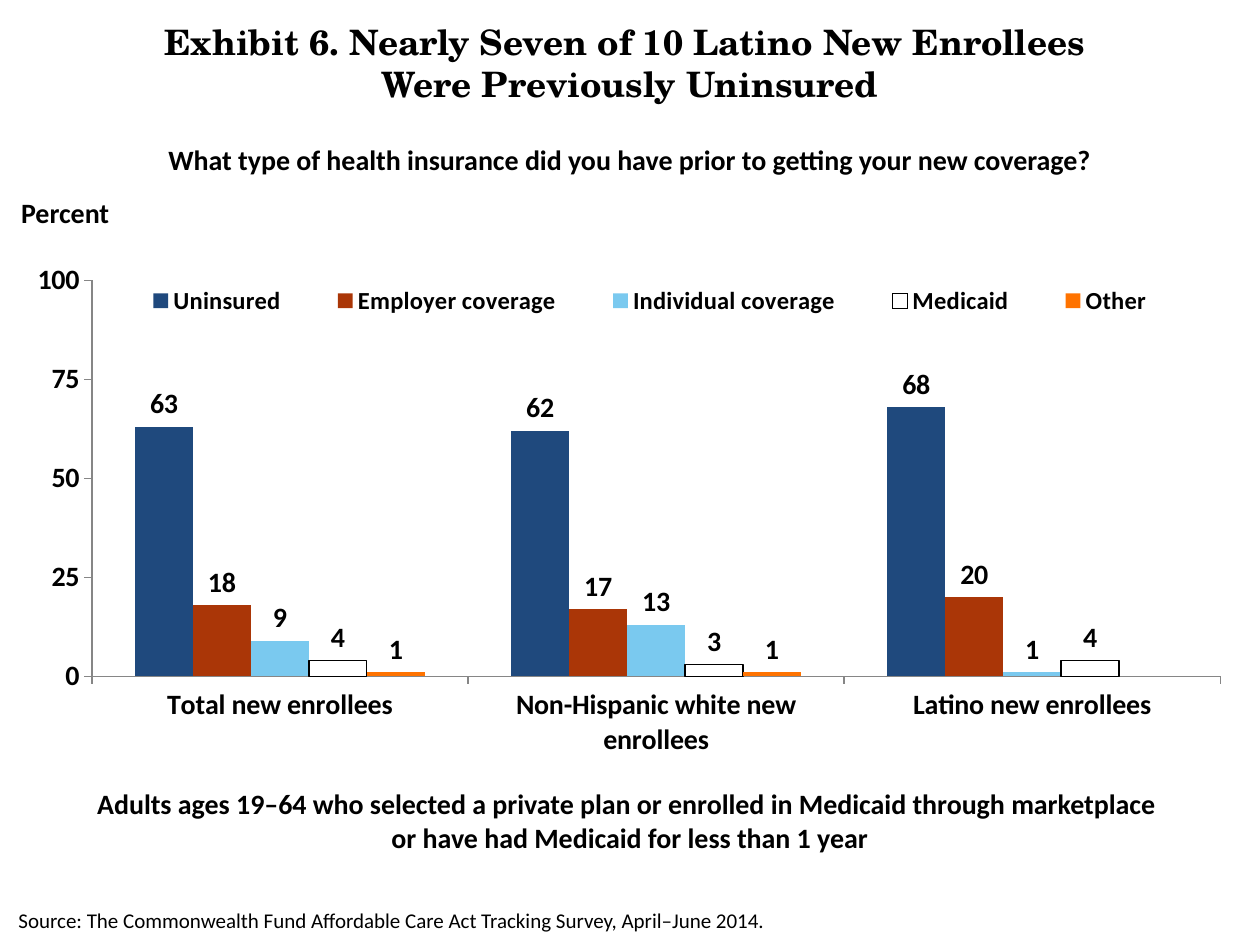
from lxml import etree
from pptx import Presentation
from pptx import util as u
from pptx.chart.data import CategoryChartData
from pptx.dml.color import RGBColor
from pptx.enum import chart as ch, text
from pptx.oxml import ns

COLORS = {
    "text": "000000",
    "axis": "868686",
    "Uninsured": "1F497D",
    "Employer coverage": "AA3607",
    "Individual coverage": "7AC9EF",
    "Medicaid": "FFFFFF",
    "Other": "FF7300",
}
GROUPS = ["Total new enrollees", "Non-Hispanic white new enrollees", "Latino new enrollees"]
PRIOR_COVERAGE = {
    "Uninsured": (63, 62, 68),
    "Employer coverage": (18, 17, 20),
    "Individual coverage": (9, 13, 1),
    "Medicaid": (4, 3, 4),
    "Other": (1, 1, None),
}


def color(name):
    return RGBColor.from_string(COLORS[name])


def place(parent, index, x, y, w, h, inner=False):
    """Fix a chart part's position, in fractions of the chart frame."""
    for old in parent.findall(ns.qn("c:layout")):
        parent.remove(old)
    layout = etree.Element(ns.qn("c:layout"))
    manual = etree.SubElement(layout, ns.qn("c:manualLayout"))
    settings = [("layoutTarget", "inner")] if inner else []
    settings += [("xMode", "edge"), ("yMode", "edge"), ("x", x), ("y", y), ("w", w), ("h", h)]
    for tag, value in settings:
        etree.SubElement(manual, ns.qn(f"c:{tag}")).set("val", str(value))
    parent.insert(index, layout)


class Exhibit:
    body_font = "Calibri"
    title_font = "TeX Gyre Schola"

    def __init__(self, slide):
        self.slide = slide

    def style(self, font, size, bold=True, name=None):
        font.name = name or self.body_font
        font.size = u.Pt(size)
        font.bold = bold
        font.color.rgb = color("text")

    def text(self, words, left, top, width, height, size=16, bold=True, name=None,
             align=text.PP_ALIGN.CENTER, anchor=text.MSO_ANCHOR.TOP):
        box = self.slide.shapes.add_textbox(*map(u.Pt, (left, top, width, height)))
        frame = box.text_frame
        frame.word_wrap = True
        frame.vertical_anchor = anchor
        paragraph = frame.paragraphs[0]
        paragraph.text = words
        paragraph.alignment = align
        self.style(paragraph.font, size, bold, name)

    def columns(self, groups, series_values, left, top, width, height):
        data = CategoryChartData(number_format="General")
        data.categories = groups
        for name, values in series_values.items():
            data.add_series(name, values)
        chart = self.slide.shapes.add_chart(
            ch.XL_CHART_TYPE.COLUMN_CLUSTERED, *map(u.Pt, (left, top, width, height)), data).chart
        self.style(chart.font, 16)
        chart.has_title = False

        plot = chart.plots[0]
        plot.gap_width = 149
        plot.overlap = 0
        plot.vary_by_categories = False
        for series in plot.series:
            series.format.fill.solid()
            series.format.fill.fore_color.rgb = color(series.name)
            series.invert_if_negative = False
            labels = series.data_labels
            labels.show_value = True
            labels.position = ch.XL_LABEL_POSITION.OUTSIDE_END
            self.style(labels.font, 16)
            if series.name == "Medicaid":
                series.format.line.color.rgb = color("text")
                series.format.line.width = u.Pt(0.75)

        for axis in (chart.category_axis, chart.value_axis):
            axis.has_major_gridlines = False
            axis.major_tick_mark = ch.XL_TICK_MARK.OUTSIDE
            axis.minor_tick_mark = ch.XL_TICK_MARK.NONE
            axis.format.line.color.rgb = color("axis")
            axis.format.line.width = u.Pt(0.75)
            self.style(axis.tick_labels.font, 16)
        chart.value_axis.minimum_scale = 0
        chart.value_axis.maximum_scale = 100
        chart.value_axis.major_unit = 25

        chart.has_legend = True
        legend = chart.legend
        legend.position = ch.XL_LEGEND_POSITION.TOP
        legend.include_in_layout = False
        self.style(legend.font, 14)
        plot_area = chart.element.find(".//" + ns.qn("c:plotArea"))
        place(plot_area, 0, 0.09, 0.06, 0.9, 0.77, inner=True)
        place(chart.element.find(".//" + ns.qn("c:legend")), 1, 0.1, 0.06, 0.87, 0.08)


def main():
    deck = Presentation()
    deck.slide_width, deck.slide_height = u.Pt(720), u.Pt(540)
    exhibit = Exhibit(deck.slides.add_slide(deck.slide_layouts[6]))
    left = text.PP_ALIGN.LEFT

    exhibit.text("Exhibit 6. Nearly Seven of 10 Latino New Enrollees \vWere Previously Uninsured",
                 0, 7, 720, 58, size=20, name=exhibit.title_font,
                 anchor=text.MSO_ANCHOR.MIDDLE)
    exhibit.text("Adults ages 19–64 who selected a private plan or enrolled in Medicaid "
                 "through marketplace \vor have had Medicaid for less than 1 year",
                 0, 446, 720, 46)
    exhibit.columns(GROUPS, PRIOR_COVERAGE, -12, 142.5, 716.5, 294)
    exhibit.text("Percent", 5, 108, 138, 27, align=left)
    exhibit.text("Source: The Commonwealth Fund Affordable Care Act Tracking Survey, April–June 2014.",
                 3.5, 515, 704, 22, size=12, bold=False, align=left)
    exhibit.text("What type of health insurance did you have prior to getting your new coverage?",
                 0, 78, 720, 27)
    deck.save("out.pptx")


if __name__ == "__main__":
    main()
